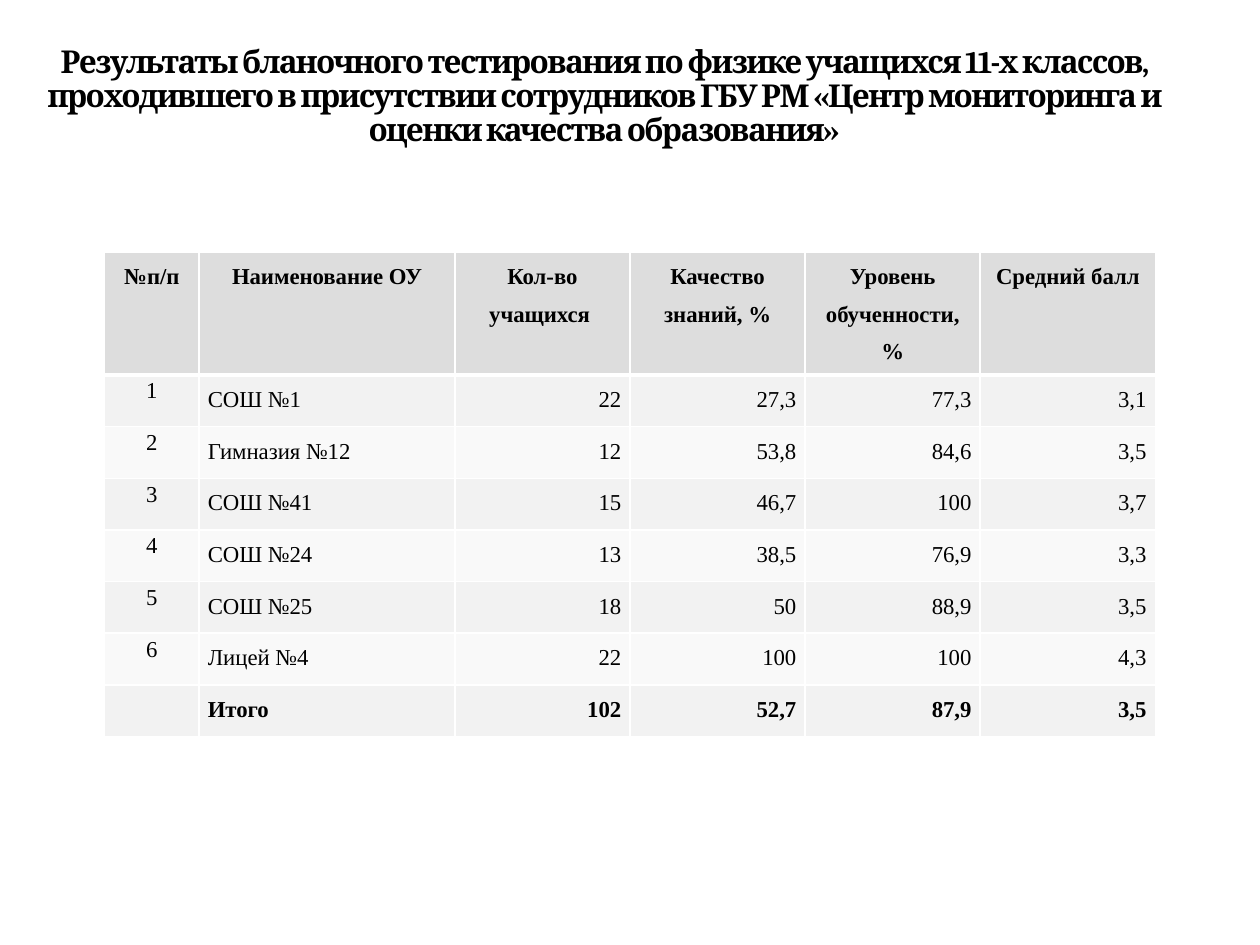
import pptx
import pptx.dml.color
import pptx.enum.text
import pptx.oxml
import pptx.oxml.ns
import pptx.util
from pptx.util import Inches

COLORS = {
    "text": "000000",
    "border": "FFFFFF",
    "header": "DDDDDD",
    "odd": "F2F2F2",
    "even": "F9F9F9",
}
ALIGN = pptx.enum.text.PP_ALIGN
TITLE = (
    "Результаты бланочного тестирования по физике учащихся 11-х классов, "
    "проходившего в присутствии сотрудников ГБУ РМ «Центр мониторинга и "
    "оценки качества образования»"
)
HEADERS = ["№п/п", "Наименование ОУ", "Кол-во учащихся ", "Качество знаний, %",
           "Уровень обученности, %", "Средний балл"]
RESULTS = [
    ["1", "СОШ №1", "22", "27,3", "77,3", "3,1"],
    ["2", "Гимназия №12", "12", "53,8", "84,6", "3,5"],
    ["3", "СОШ №41", "15", "46,7", "100", "3,7"],
    ["4", "СОШ №24", "13", "38,5", "76,9", "3,3"],
    ["5", "СОШ №25", "18", "50", "88,9", "3,5"],
    ["6", "Лицей №4", "22", "100", "100", "4,3"],
    ["", "Итого", "102", "52,7", "87,9", "3,5"],
]
COLUMN_WIDTHS = [0.75, 2.03] + [1.39] * 4
ROW_HEIGHT = 0.41


def rgb(name):
    return pptx.dml.color.RGBColor.from_string(COLORS[name])


def style_font(font, family, size, bold):
    font.name = family
    font.size = pptx.util.Pt(size)
    font.bold = bold
    font.color.rgb = rgb("text")


def add_title(slide, left, top, width, height):
    frame = slide.shapes.add_textbox(
        Inches(left), Inches(top), Inches(width), Inches(height)).text_frame
    frame.word_wrap = True
    frame.vertical_anchor = pptx.enum.text.MSO_ANCHOR.MIDDLE
    heading = frame.paragraphs[0]
    heading.alignment = ALIGN.CENTER
    heading.line_spacing = 0.9
    run = heading.add_run()
    run.text = TITLE
    style_font(run.font, "Cambria", 18, True)
    run.font._element.set("spc", "-100")


def set_borders(cell, top, bottom):
    properties = cell._tc.get_or_add_tcPr()
    widths = {"L": 1, "R": 1, "T": top, "B": bottom}
    for position, (side, points) in enumerate(widths.items()):
        border = pptx.oxml.parse_xml(
            f'<a:ln{side} {pptx.oxml.ns.nsdecls("a")} w="{pptx.util.Pt(points)}">'
            f'<a:solidFill><a:srgbClr val="{COLORS["border"]}"/></a:solidFill>'
            f'</a:ln{side}>')
        properties.insert(position, border)


def fill_cell(cell, text, fill, alignment, spacing, bold):
    cell.margin_left = cell.margin_right = Inches(0.07)
    cell.margin_top = cell.margin_bottom = 0
    cell.fill.solid()
    cell.fill.fore_color.rgb = rgb(fill)
    paragraph = cell.text_frame.paragraphs[0]
    paragraph.alignment = alignment
    paragraph.line_spacing = spacing
    if text:
        run = paragraph.add_run()
        run.text = text
        style_font(run.font, "Times New Roman", 13, bold)


def add_results(slide, left, top):
    rows = [HEADERS] + RESULTS
    table = slide.shapes.add_table(
        len(rows), len(HEADERS), Inches(left), Inches(top),
        Inches(sum(COLUMN_WIDTHS)), Inches(ROW_HEIGHT * len(rows))).table
    for column, width in zip(table.columns, COLUMN_WIDTHS):
        column.width = Inches(width)
    body_alignment = [ALIGN.CENTER, ALIGN.LEFT] + [ALIGN.RIGHT] * 4
    for r, values in enumerate(rows):
        table.rows[r].height = Inches(ROW_HEIGHT)
        is_header = r == 0
        fill = "header" if is_header else "odd" if r % 2 else "even"
        for c, text in enumerate(values):
            cell = table.cell(r, c)
            alignment = ALIGN.CENTER if is_header else body_alignment[c]
            if c == 1 and r > 1:
                alignment = ALIGN.JUSTIFY
            spacing = 1.15 if c == 0 and not is_header else 1.5
            fill_cell(cell, text, fill, alignment, spacing,
                      is_header or r == len(rows) - 1)
            set_borders(cell, 3 if r == 1 else 1, 3 if is_header else 1)


def main():
    deck = pptx.Presentation()
    deck.slide_width = Inches(10)
    deck.slide_height = Inches(7.5)
    slide = deck.slides.add_slide(deck.slide_layouts[6])
    add_title(slide, 0.17, 0.3, 9.25, 0.95)
    add_results(slide, 0.83, 2)
    deck.save("out.pptx")


if __name__ == "__main__":
    main()
